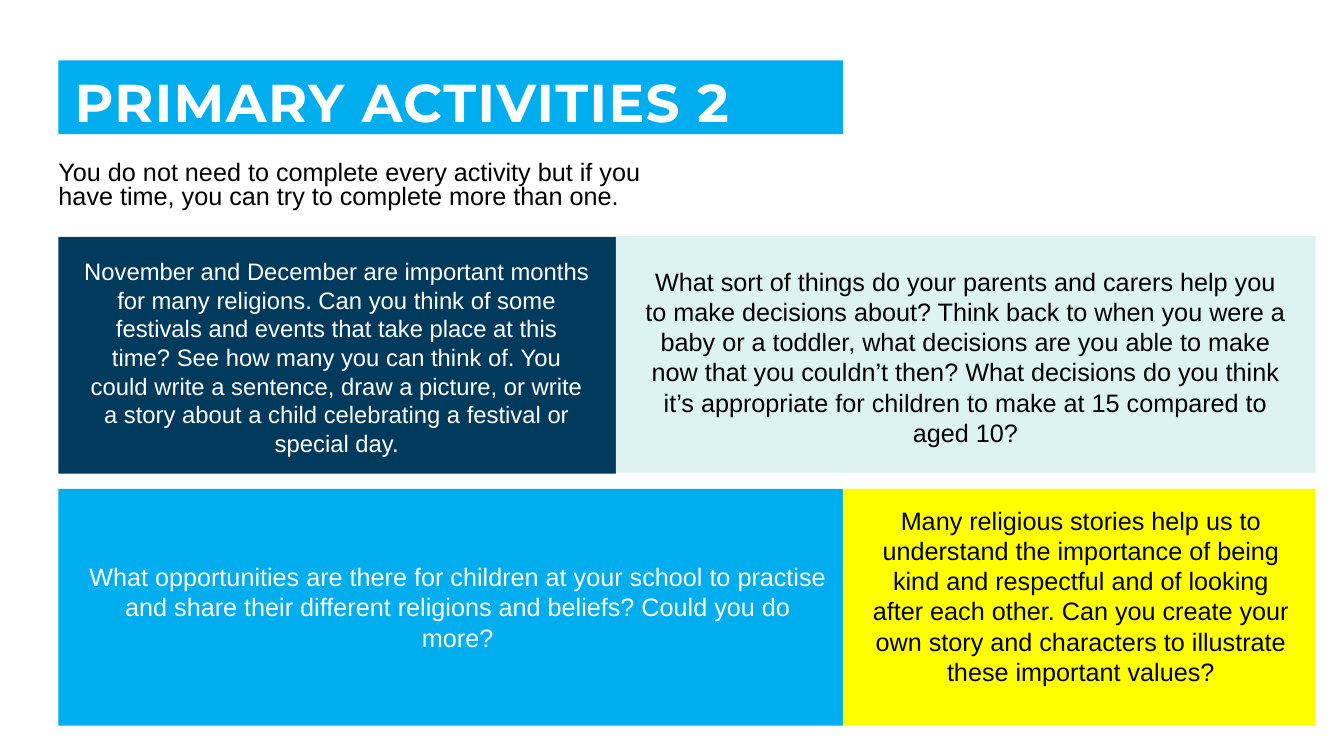
import pptx
import pptx.dml.color
import pptx.enum.shapes
import pptx.enum.text
import pptx.util

Inches = pptx.util.Inches
Pt = pptx.util.Pt
PP_ALIGN = pptx.enum.text.PP_ALIGN
ANCHOR = pptx.enum.text.MSO_ANCHOR

SKY, NAVY, MINT, YELLOW = "00AEEF", "003B5E", "DDF3F1", "FFFF00"
WHITE, BLACK = "FFFFFF", "000000"
LEFT, RIGHT = 0.58, 13.05
TOP_SPLIT, BOTTOM_SPLIT = 6.11, 8.36
CARD_HEIGHT = 2.35


def paint(color_format, hex_color):
    color_format.rgb = pptx.dml.color.RGBColor.from_string(hex_color)


def write(frame, text, size, color, font="Arial", align=PP_ALIGN.LEFT):
    frame.word_wrap = True
    frame.auto_size = pptx.enum.text.MSO_AUTO_SIZE.NONE
    paragraph = frame.paragraphs[0]
    paragraph.text = text
    paragraph.alignment = align
    paragraph.space_before = Pt(0)
    paragraph.font.name = font
    paragraph.font.size = Pt(size)
    paint(paragraph.font.color, color)
    return paragraph


presentation = pptx.Presentation()
presentation.slide_width = Inches(13.33)
presentation.slide_height = Inches(7.5)
slide = presentation.slides.add_slide(presentation.slide_layouts.get_by_name("Title Only"))

# Title banner, as wide as the lower left card
title = slide.shapes.title
title.left, title.top = Inches(LEFT), Inches(0.6)
title.width, title.height = Inches(BOTTOM_SPLIT - LEFT), Inches(0.73)
title.fill.solid()
paint(title.fill.fore_color, SKY)
frame = title.text_frame
frame.margin_left, frame.margin_top = Inches(0.16), Inches(0.16)
frame.margin_right, frame.margin_bottom = Inches(0.12), 0
frame.vertical_anchor = ANCHOR.MIDDLE
heading = write(frame, "PRIMARY ACTIVITIES 2", 38, WHITE, "Montserrat")
heading.line_spacing = 0.9
heading.font.bold = True
heading.runs[0].font._element.set("spc", "100")

# Introduction
intro = slide.shapes.add_textbox(Inches(LEFT), Inches(1.56), Inches(6.21), Inches(0.62))
intro.text_frame.margin_left = 0
write(
    intro.text_frame,
    "You do not need to complete every activity but if you have time, "
    "you can try to complete more than one.",
    18, BLACK,
).line_spacing = 0.8

# Cards: left, right, top, fill, text box (left, top, width, height), size, colour, text
cards = [
    (LEFT, TOP_SPLIT, 2.35, NAVY, (0.73, 2.5, 5.22, 2.1), 17, WHITE,
     "November and December are important months for many religions. Can you think of "
     "some festivals and events that take place at this time? See how many you can "
     "think of. You could write a sentence, draw a picture, or write a story about a "
     "child celebrating a festival or special day."),
    (TOP_SPLIT, RIGHT, 2.34, MINT, (6.27, 2.59, 6.61, 1.92), 18, BLACK,
     "What sort of things do your parents and carers help you to make decisions about? "
     "Think back to when you were a baby or a toddler, what decisions are you able to "
     "make now that you couldn’t then? What decisions do you think it’s appropriate "
     "for children to make at 15 compared to aged 10?"),
    (LEFT, BOTTOM_SPLIT, 4.85, SKY, (0.77, 5.52, 7.54, 1.01), 18, WHITE,
     "What opportunities are there for children at your school to practise and share "
     "their different religions and beliefs? Could you do more?"),
    (BOTTOM_SPLIT, RIGHT, 4.85, YELLOW, (8.52, 4.96, 4.4, 1.92), 18, BLACK,
     "Many religious stories help us to understand the importance of being kind and "
     "respectful and of looking after each other. Can you create your own story and "
     "characters to illustrate these important values?"),
]
for left, right, top, fill, text_area, size, color, text in cards:
    card = slide.shapes.add_shape(
        pptx.enum.shapes.MSO_SHAPE.RECTANGLE,
        Inches(left), Inches(top), Inches(right - left), Inches(CARD_HEIGHT),
    )
    card.shadow.inherit = False
    card.fill.solid()
    paint(card.fill.fore_color, fill)
    card.line.fill.background()
    label = slide.shapes.add_textbox(*map(Inches, text_area))
    write(label.text_frame, text, size, color, align=PP_ALIGN.CENTER)

presentation.save("out.pptx")
